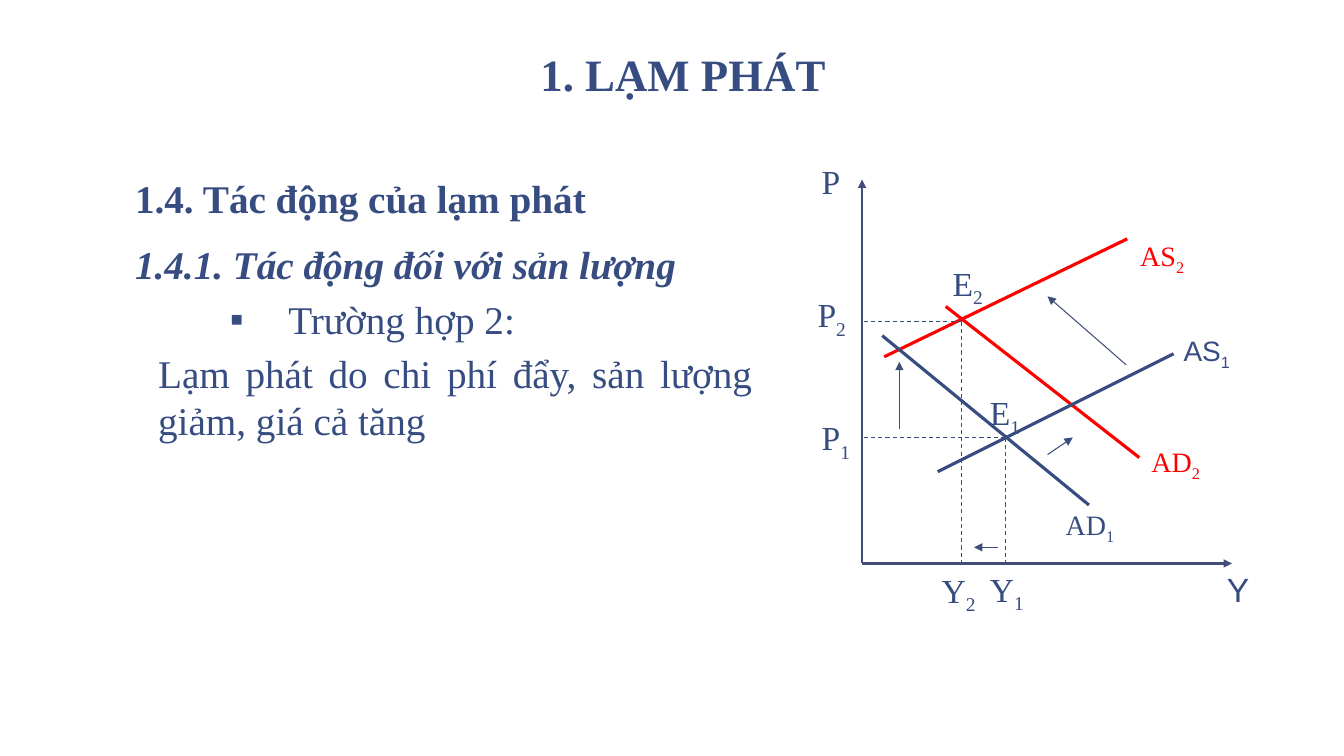
from pptx import Presentation
from pptx import util as u
from pptx.dml.color import RGBColor
from pptx.enum import dml, shapes, text
from pptx.oxml.ns import qn
from lxml import etree

PX = 9144  # 100 px to the inch


class Theme:
    ink = RGBColor.from_string("374C81")
    axis = RGBColor.from_string("414E77")
    red = RGBColor.from_string("FF0000")
    serif, sans = "Times New Roman", "Arial"
    title, body, mark, curve = 32, 28, 24, 20


def px(*nums):
    return [u.Emu(n * PX) for n in nums]


def put(item, vals):
    for key, val in vals.items():
        setattr(item, key, val)


def style(font, size, name=Theme.serif, color=Theme.ink, **more):
    put(font, {"size": u.Pt(size), "name": name, **more})
    font.color.rgb = color


def place(shape, box):
    put(shape, dict(zip(("left", "top", "width", "height"), px(*box))))


def inset(frame, side, end):
    wide, high = px(side, end)
    put(frame, {"margin_left": wide, "margin_right": wide,
                "margin_top": high, "margin_bottom": high,
                "word_wrap": True, "auto_size": text.MSO_AUTO_SIZE.NONE})


def bullet(para, left, hang, char=None):
    props = para._p.get_or_add_pPr()
    props.set("marL", str(left * PX))
    props.set("indent", str(-hang * PX))
    if char:
        etree.SubElement(props, qn("a:buFont")).set("typeface", Theme.sans)
        etree.SubElement(props, qn("a:buChar")).set("char", char)
    else:
        etree.SubElement(props, qn("a:buNone"))


# Title
def head(slide, box, words):
    shape = slide.shapes.title
    place(shape, box)
    frame = shape.text_frame
    inset(frame, 13, 7)
    frame.vertical_anchor = text.MSO_ANCHOR.BOTTOM
    para = frame.paragraphs[0]
    para.text = words
    put(para, {"alignment": text.PP_ALIGN.CENTER, "line_spacing": 0.85})
    style(para.font, Theme.title, bold=True)


# Headings and the bulleted case
def outline(slide, box, rows):
    shape = slide.placeholders[1]
    place(shape, box)
    frame = shape.text_frame
    inset(frame, 13, 7)
    for n, (words, level, gap, indent, face) in enumerate(rows):
        para = frame.add_paragraph() if n else frame.paragraphs[0]
        para.text = words
        put(para, {"level": level, "line_spacing": 0.85,
                   "space_before": u.Pt(gap)})
        bullet(para, *indent)
        style(para.font, Theme.body, **face)


# Justified statement
def note(slide, box, words):
    frame = slide.shapes.add_textbox(*px(*box)).text_frame
    inset(frame, 10, 5)
    para = frame.paragraphs[0]
    para.text = words
    put(para, {"alignment": text.PP_ALIGN.JUSTIFY, "line_spacing": u.Pt(33)})
    style(para.font, Theme.body)


def line(slide, ends, color, width, dash=False, arrow=False):
    link = slide.shapes.add_connector(shapes.MSO_CONNECTOR.STRAIGHT, *px(*ends))
    link.line.color.rgb = color
    link.line.width = u.Pt(width)
    if dash:
        link.line.dash_style = dml.MSO_LINE.DASH
    if arrow:
        tail = etree.SubElement(link.line._get_or_add_ln(), qn("a:tailEnd"))
        tail.set("type", "triangle")
    etree.SubElement(link._element.spPr, qn("a:effectLst"))


def label(slide, spot, words, sub, size, color, name):
    frame = slide.shapes.add_textbox(*px(*spot, 75, 50)).text_frame
    inset(frame, 10, 5)
    para = frame.paragraphs[0]
    for part in filter(None, (words, sub)):
        run = para.add_run()
        run.text = part
        style(run.font, size, name, color)
    if sub:
        run._r.get_or_add_rPr().set("baseline", "-25000")


# Supply and demand graph
def graph(slide, box):
    left, top = box[:2]
    ink, red, axis = Theme.ink, Theme.red, Theme.axis
    serif, sans = Theme.serif, Theme.sans
    zero, base = 55, 409

    def draw(x1, y1, x2, y2, *look, **more):
        line(slide, (left + x1, top + y1, left + x2, top + y2), *look, **more)

    # Curves
    for ends, color in (((77, 204, 318, 87), red),
                        ((138, 154, 330, 304), red),
                        ((75, 183, 280, 351), ink),
                        ((130, 318, 364, 201), ink)):
        draw(*ends, color, 2.25)

    # Guides from each balance point to both axes
    for x, y in ((197, 284), (154, 169)):
        draw(x, y, x, base, ink, 0.75, dash=True)
        draw(x, y, zero, y, ink, 0.75, dash=True)

    # Axes and shift arrows
    for ends, color, width in (((zero, base, zero, 28), axis, 2),
                               ((zero, base, 422, base), axis, 2),
                               ((92, 276, 92, 209), axis, 0.75),
                               ((239, 301, 264, 284), ink, 0.75),
                               ((317, 212, 239, 144), axis, 0.75),
                               ((190, 393, 166, 393), axis, 0.5)):
        draw(*ends, color, width, arrow=True)

    # Labels
    mark, curve = Theme.mark, Theme.curve
    for x, y, words, sub, size, color, name in (
            (5, 5, "P", "", mark, ink, serif),
            (1, 137, "P", "2", mark, ink, serif),
            (5, 259, "P", "1", mark, ink, serif),
            (135, 106, "E", "2", mark, ink, serif),
            (172, 234, "E", "1", mark, ink, serif),
            (124, 410, "Y", "2", mark, ink, serif),
            (172, 409, "Y", "1", mark, ink, serif),
            (407, 409, "Y", "", mark, ink, sans),
            (364, 176, "AS", "1", curve, ink, sans),
            (321, 82, "AS", "2", curve, red, serif),
            (247, 349, "AD", "1", curve, ink, serif),
            (332, 286, "AD", "2", curve, red, serif)):
        label(slide, (left + x, top + y), words, sub, size, color, name)


def main():
    deck = Presentation()
    deck.slide_width, deck.slide_height = px(1333, 750)
    slide = deck.slides.add_slide(deck.slide_layouts[1])
    head(slide, (122, 8, 1111, 99), "1. LẠM PHÁT")
    outline(slide, (121, 173, 1111, 181), (
        ("1.4. Tác động của lạm phát", 0, 0, (33, 33), {"bold": True}),
        ("1.4.1. Tác động đối với sản lượng", 0, 18.7, (33, 33),
         {"bold": True, "italic": True}),
        ("Trường hợp 2:", 1, 10.7, (152, 58, "▪"), {}),
    ))
    note(slide, (147, 343, 609, 103),
         "Lạm phát do chi phí đẩy, sản lượng giảm, giá cả tăng")
    graph(slide, (800, 150, 447, 460))
    deck.save("out.pptx")


if __name__ == "__main__":
    main()
